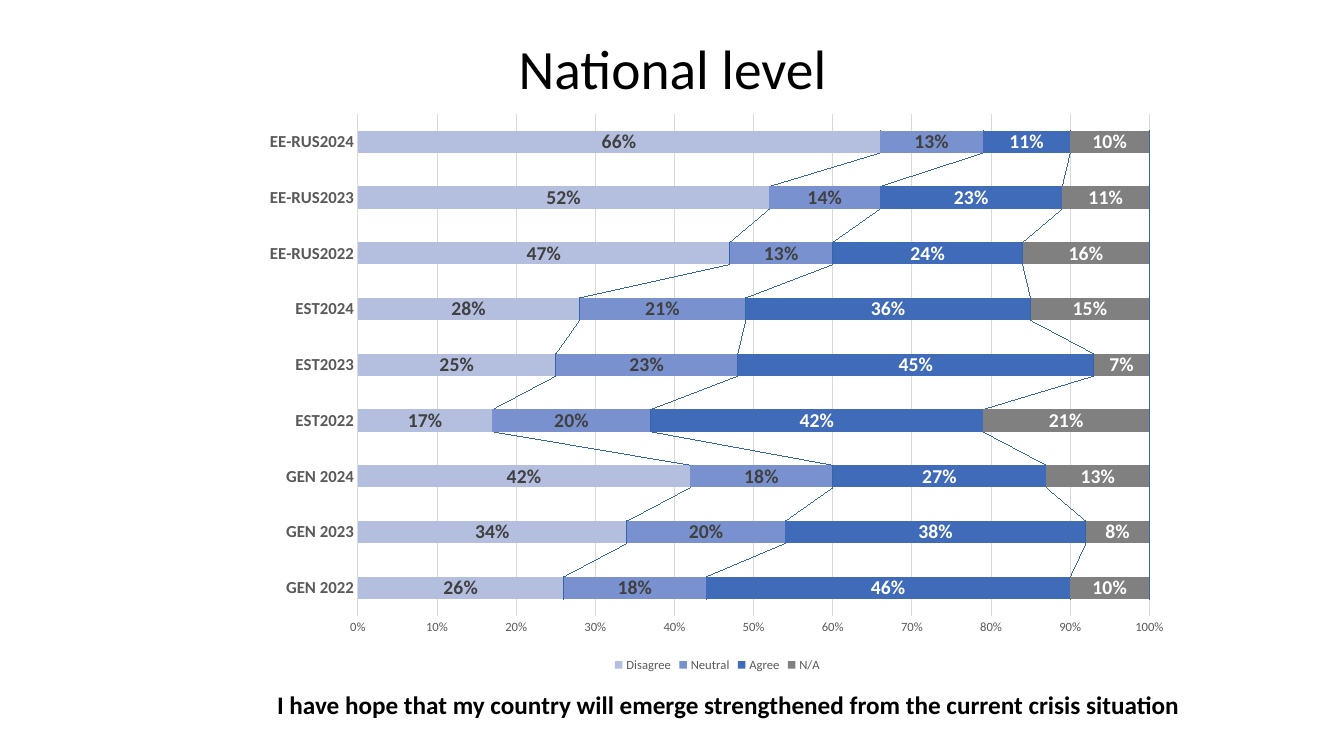
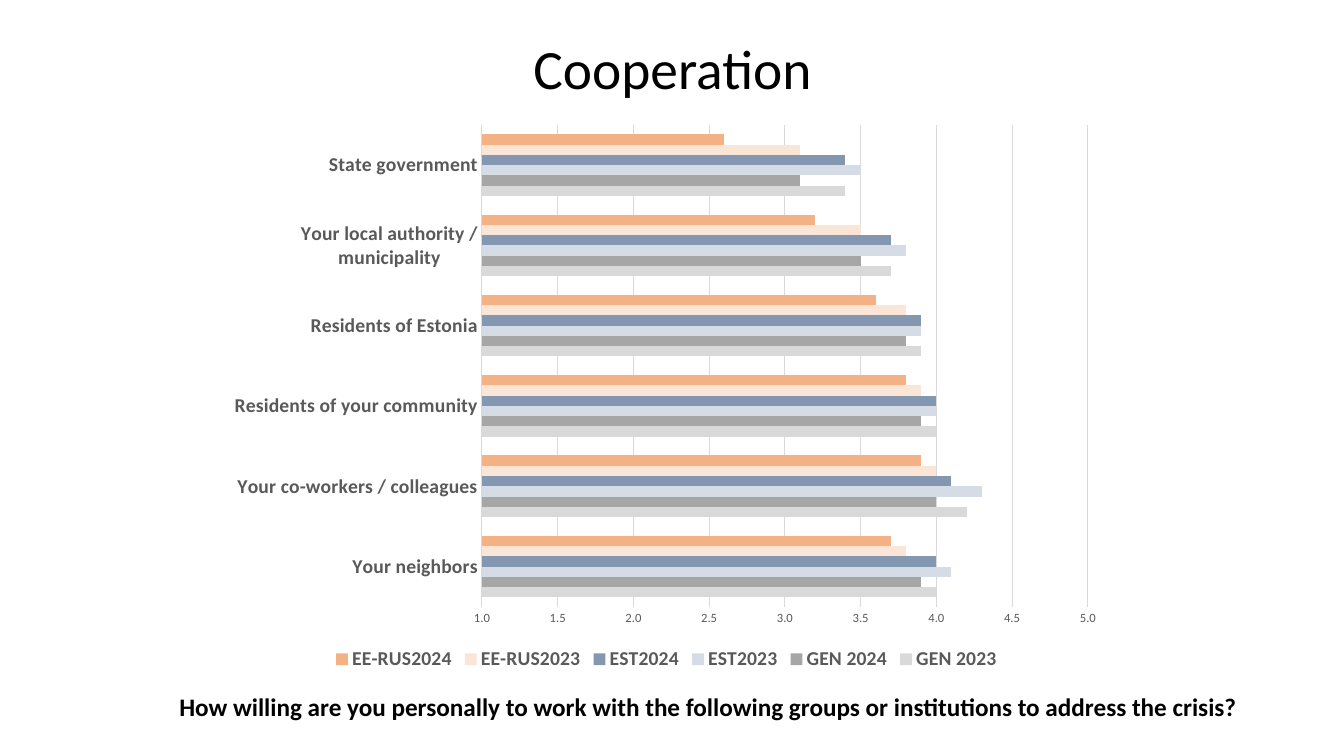
import lxml.etree
import pptx
import pptx.chart.data
import pptx.dml.color
import pptx.enum.chart
import pptx.enum.text
import pptx.oxml.ns
import pptx.util

Inches = pptx.util.Inches
Pt = pptx.util.Pt
qn = pptx.oxml.ns.qn

BLACK, DARK, GREY, RULE, WHITE = "000000", "404040", "595959", "D9D9D9", "FFFFFF"
LINK = "2E75B6"


def rgb(value):
    return pptx.dml.color.RGBColor.from_string(value)


def assign(target, values):
    for name, value in values.items():
        setattr(target, name, value)


class Deck:
    """Holds the shared style and the slide being filled."""

    font = "Calibri"
    title_box = (0.92, 0.4, 11.5, 0.62)

    def __init__(self):
        self.presentation = pptx.Presentation()
        assign(self.presentation, {"slide_width": Inches(13.33),
                                   "slide_height": Inches(7.5)})
        self.slide = None

    def style(self, font, size, color=BLACK, bold=False):
        assign(font, {"name": self.font, "size": Pt(size), "bold": bold})
        font.color.rgb = rgb(color)

    def rule(self, line, color=RULE):
        line.color.rgb = rgb(color)
        line.width = Pt(0.75)

    def add_slide(self, heading):
        self.slide = self.presentation.slides.add_slide(
            self.presentation.slide_layouts[5])
        title = self.slide.shapes.title
        sides = ("left", "top", "width", "height")
        assign(title, dict(zip(sides, map(Inches, self.title_box))))
        title.text_frame.text = heading
        assign(title.text_frame, {
            "auto_size": pptx.enum.text.MSO_AUTO_SIZE.NONE,
            "vertical_anchor": pptx.enum.text.MSO_ANCHOR.MIDDLE})
        paragraph = title.text_frame.paragraphs[0]
        assign(paragraph, {"alignment": pptx.enum.text.PP_ALIGN.CENTER,
                           "line_spacing": 0.9})
        self.style(paragraph.runs[0].font, 39.6)

    def add_question(self, wording, box):
        frame = self.slide.shapes.add_textbox(*map(Inches, box)).text_frame
        assign(frame, {"word_wrap": True, "text": wording,
                       "auto_size": pptx.enum.text.MSO_AUTO_SIZE.SHAPE_TO_FIT_TEXT})
        self.style(frame.paragraphs[0].runs[0].font, 18, bold=True)

    def add_bars(self, kind, box, plot_box, groups, answers, number_format,
                 gap, group_size, legend_size, legend_bold=False, scale=None):
        """Draw a bar chart; answers maps a name to (fill, values)."""
        survey = pptx.chart.data.CategoryChartData(number_format=number_format)
        survey.categories = groups
        for name, (_, values) in answers.items():
            survey.add_series(name, values)
        chart = self.slide.shapes.add_chart(
            kind, *map(Inches, box), survey).chart
        assign(chart, {"has_title": False, "has_legend": True})
        self.style(chart.font, 10)

        # Legend
        assign(chart.legend, {
            "position": pptx.enum.chart.XL_LEGEND_POSITION.BOTTOM,
            "include_in_layout": False})
        self.style(chart.legend.font, legend_size, GREY, legend_bold)

        # Axes
        no_tick = pptx.enum.chart.XL_TICK_MARK.NONE
        for axis in (chart.category_axis, chart.value_axis):
            assign(axis, {"major_tick_mark": no_tick, "minor_tick_mark": no_tick})
        self.style(chart.category_axis.tick_labels.font, group_size, GREY, True)
        self.rule(chart.category_axis.format.line)
        chart.category_axis.has_major_gridlines = False
        assign(chart.value_axis, {"has_major_gridlines": True, **(scale or {})})
        self.rule(chart.value_axis.major_gridlines.format.line)
        chart.value_axis.format.line.fill.background()
        assign(chart.value_axis.tick_labels, {
            "number_format": number_format, "number_format_is_linked": False})
        self.style(chart.value_axis.tick_labels.font, 9, GREY)

        # Bars
        plot = chart.plots[0]
        assign(plot, {"gap_width": gap, "vary_by_categories": False})
        for series, (fill, _) in zip(plot.series, answers.values()):
            series.format.fill.solid()
            series.format.fill.fore_color.rgb = rgb(fill)
            series.invert_if_negative = False
        self.place_plot(chart, box, plot_box)
        return chart

    def place_plot(self, chart, box, plot_box):
        """Fix the inner plot area, given in slide inches."""
        area = chart.element.find(".//" + qn("c:plotArea"))
        layout = area.find(qn("c:layout"))
        if layout is None:
            layout = lxml.etree.Element(qn("c:layout"))
            area.insert(0, layout)
        manual = lxml.etree.SubElement(layout, qn("c:manualLayout"))
        left, top, width, height = box
        x, y, w, h = plot_box
        settings = {"layoutTarget": "inner", "xMode": "edge", "yMode": "edge",
                    "x": (x - left) / width, "y": (y - top) / height,
                    "w": w / width, "h": h / height}
        for tag, value in settings.items():
            lxml.etree.SubElement(manual, qn("c:" + tag)).set("val", str(value))

    def label_bars(self, chart, number_format, colors):
        for series, color in zip(chart.plots[0].series, colors):
            assign(series.data_labels, {
                "show_value": True, "number_format": number_format,
                "number_format_is_linked": False})
            self.style(series.data_labels.font, 14, color, True)

    def link_bars(self, chart):
        """Join the stacked bars with series lines."""
        overlap = chart.element.find(".//" + qn("c:overlap"))
        links = lxml.etree.Element(qn("c:serLines"))
        overlap.addnext(links)
        shape = lxml.etree.SubElement(links, qn("c:spPr"))
        line = lxml.etree.SubElement(shape, qn("a:ln"), w=str(Pt(0.75)))
        fill = lxml.etree.SubElement(line, qn("a:solidFill"))
        lxml.etree.SubElement(fill, qn("a:srgbClr"), val=LINK)


def main():
    deck = Deck()
    bar_types = pptx.enum.chart.XL_CHART_TYPE

    # National level
    deck.add_slide("National level")
    deck.add_question("I have hope that my country will emerge strengthened "
                      "from the current crisis situation",
                      (2.65, 6.79, 9.47, 0.4))
    hope = deck.add_bars(
        bar_types.BAR_STACKED_100, (2.5, 1.02, 9.23, 5.69),
        (3.55, 1.13, 7.85, 4.98),
        ["GEN 2022", "GEN 2023", "GEN 2024", "EST2022", "EST2023", "EST2024",
         "EE-RUS2022", "EE-RUS2023", "EE-RUS2024"],
        {"Disagree": ("B4BEDF", (0.26, 0.34, 0.42, 0.17, 0.25, 0.28, 0.47, 0.52, 0.66)),
         "Neutral": ("7991CE", (0.18, 0.2, 0.18, 0.2, 0.23, 0.21, 0.13, 0.14, 0.13)),
         "Agree": ("406BB8", (0.46, 0.38, 0.27, 0.42, 0.45, 0.36, 0.24, 0.23, 0.11)),
         "N/A": ("808080", (0.1, 0.08, 0.13, 0.21, 0.07, 0.15, 0.16, 0.11, 0.1))},
        "0%", gap=150, group_size=12, legend_size=9)
    deck.label_bars(hope, "0%", (DARK, DARK, WHITE, WHITE))
    deck.link_bars(hope)

    # Cooperation
    deck.add_slide("Cooperation")
    deck.add_question("How willing are you personally to work with the following "
                      "groups or institutions to address the crisis?",
                      (1.68, 6.81, 11.07, 0.4))
    deck.add_bars(
        bar_types.BAR_CLUSTERED, (2.16, 1.12, 8.9, 5.58),
        (4.78, 1.24, 6.01, 4.78),
        ["Your neighbors", "Your co-workers / colleagues",
         "Residents of your community", "Residents of Estonia",
         "Your local authority / municipality", "State government"],
        {"GEN 2023": ("D9D9D9", (4, 4.2, 4, 3.9, 3.7, 3.4)),
         "GEN 2024": ("A6A6A6", (3.9, 4, 3.9, 3.8, 3.5, 3.1)),
         "EST2023": ("D6DCE5", (4.1, 4.3, 4, 3.9, 3.8, 3.5)),
         "EST2024": ("8497B0", (4, 4.1, 4, 3.9, 3.7, 3.4)),
         "EE-RUS2023": ("FBE5D6", (3.8, 4, 3.9, 3.8, 3.5, 3.1)),
         "EE-RUS2024": ("F4B183", (3.7, 3.9, 3.8, 3.6, 3.2, 2.6))},
        "0.0", gap=182, group_size=14, legend_size=14, legend_bold=True,
        scale={"minimum_scale": 1, "maximum_scale": 5, "major_unit": 0.5})

    deck.presentation.save("out.pptx")


if __name__ == "__main__":
    main()
